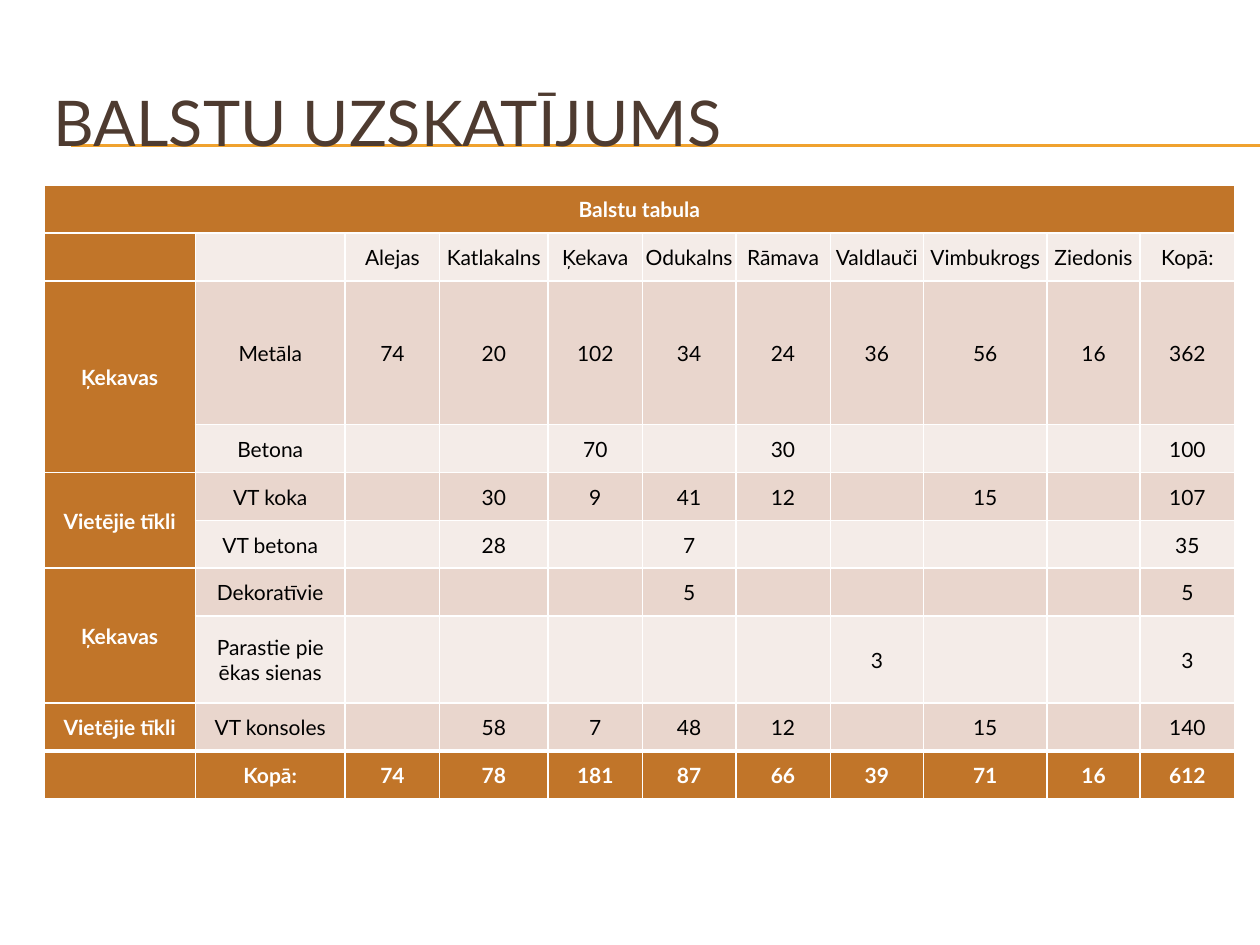
from lxml import etree
from pptx import Presentation, util as u
from pptx.dml.color import RGBColor
from pptx.enum import shapes, text
from pptx.oxml import ns

COLORS = {
    "title": "4E3B30", "rule": "F0A22E", "accent": "C17529", "white": "FFFFFF",
    "black": "000000", "dark_band": "E9D6CD", "light_band": "F4ECE8",
}
FONT = "Lato"
COLUMN_WIDTHS = [1.2, 1.19, 0.75, 0.86, 0.75, 0.74, 0.75, 0.74, 0.98, 0.74, 0.75]
ROW_HEIGHTS = {2: 1.14, 7: 0.69}
ROW_HEIGHT = 0.38
ROWS = [
    ["Balstu tabula"] + [""] * 10,
    ["", "", "Alejas", "Katlakalns", "Ķekava", "Odukalns", "Rāmava",
     "Valdlauči", "Vimbukrogs", "Ziedonis", "Kopā:"],
    ["Ķekavas", "Metāla", 74, 20, 102, 34, 24, 36, 56, 16, 362],
    ["", "Betona", "", "", 70, "", 30, "", "", "", 100],
    ["Vietējie tīkli", "VT koka", "", 30, 9, 41, 12, "", 15, "", 107],
    ["", "VT betona", "", 28, "", 7, "", "", "", "", 35],
    ["Ķekavas", "Dekoratīvie", "", "", "", 5, "", "", "", "", 5],
    ["", "Parastie pie ēkas sienas", "", "", "", "", "", 3, "", "", 3],
    ["Vietējie tīkli", "VT konsoles", "", 58, 7, 48, 12, "", 15, "", 140],
    ["", "Kopā:", 74, 78, 181, 87, 66, 39, 71, 16, 612],
]
LAST_ROW = len(ROWS) - 1
MERGES = [((0, 0), (0, 10))] + [((row, 0), (row + 1, 0)) for row in (2, 4, 6)]


def rgb(name):
    return RGBColor.from_string(COLORS[name])


def set_values(target, values):
    for name, value in values.items():
        setattr(target, name, value)


def write_text(paragraph, content, size, color, bold=False):
    run = paragraph.add_run()
    run.text = content
    set_values(run.font, {"name": FONT, "size": u.Pt(size), "bold": bold})
    run.font.color.rgb = rgb(color)


def add_rule(slide, top):
    line = slide.shapes.add_connector(
        shapes.MSO_CONNECTOR.STRAIGHT,
        u.Inches(0.56), u.Inches(top), u.Inches(10), u.Inches(top))
    line.line.color.rgb = rgb("rule")
    line.line.width = u.Pt(0.75)
    etree.SubElement(line._element.spPr, ns.qn("a:effectLst"))


def add_title(slide, content):
    box = slide.shapes.add_textbox(
        u.Inches(0.33), u.Inches(0.5), u.Inches(9.5), u.Inches(0.92))
    set_values(box.text_frame, {
        "word_wrap": True, "vertical_anchor": text.MSO_ANCHOR.MIDDLE})
    write_text(box.text_frame.paragraphs[0], content, 36, "title")


def add_borders(cell, widths):
    properties = cell._tc.get_or_add_tcPr()
    for side, width in widths.items():
        border = etree.SubElement(properties, ns.qn(f"a:ln{side}"), w=str(u.Pt(width)))
        fill = etree.SubElement(border, ns.qn("a:solidFill"))
        etree.SubElement(fill, ns.qn("a:srgbClr"), val=COLORS["white"])


def format_cell(cell, row, column, content):
    emphasized = row in (0, LAST_ROW) or column == 0
    band = "light_band" if row % 2 else "dark_band"
    set_values(cell, {
        "margin_left": u.Inches(0.01), "margin_right": u.Inches(0.01),
        "margin_top": u.Inches(0.01), "margin_bottom": 0,
        "vertical_anchor": text.MSO_ANCHOR.MIDDLE})
    # A thicker edge sets off the totals row
    add_borders(cell, {"L": 1, "R": 1, "T": 3 if row == LAST_ROW else 1,
                       "B": 3 if row == LAST_ROW - 1 else 1})
    cell.fill.solid()
    cell.fill.fore_color.rgb = rgb("accent" if emphasized else band)
    if content != "":
        paragraph = cell.text_frame.paragraphs[0]
        paragraph.alignment = text.PP_ALIGN.CENTER
        write_text(paragraph, str(content), 12,
                   "white" if emphasized else "black", emphasized)


def add_pole_table(slide):
    heights = [ROW_HEIGHTS.get(row, ROW_HEIGHT) for row in range(len(ROWS))]
    table = slide.shapes.add_table(
        len(ROWS), len(COLUMN_WIDTHS), u.Inches(0.35), u.Inches(1.47),
        u.Inches(sum(COLUMN_WIDTHS)), u.Inches(sum(heights))).table
    set_values(table, {"first_row": False, "horz_banding": False})
    for column, width in zip(table.columns, COLUMN_WIDTHS):
        column.width = u.Inches(width)
    for row, height in zip(table.rows, heights):
        row.height = u.Inches(height)
    for row, values in enumerate(ROWS):
        for column, content in enumerate(values):
            format_cell(table.cell(row, column), row, column, content)
    for first, last in MERGES:
        table.cell(*first).merge(table.cell(*last))


def main():
    presentation = Presentation()
    set_values(presentation, {
        "slide_width": u.Inches(10), "slide_height": u.Inches(7.5)})
    slide = presentation.slides.add_slide(presentation.slide_layouts[6])

    # Title with its double rule
    for top in (1.15, 1.16):
        add_rule(slide, top)
    add_title(slide, "BALSTU UZSKATĪJUMS")

    # Pole counts by place
    add_pole_table(slide)
    presentation.save("out.pptx")


if __name__ == "__main__":
    main()
